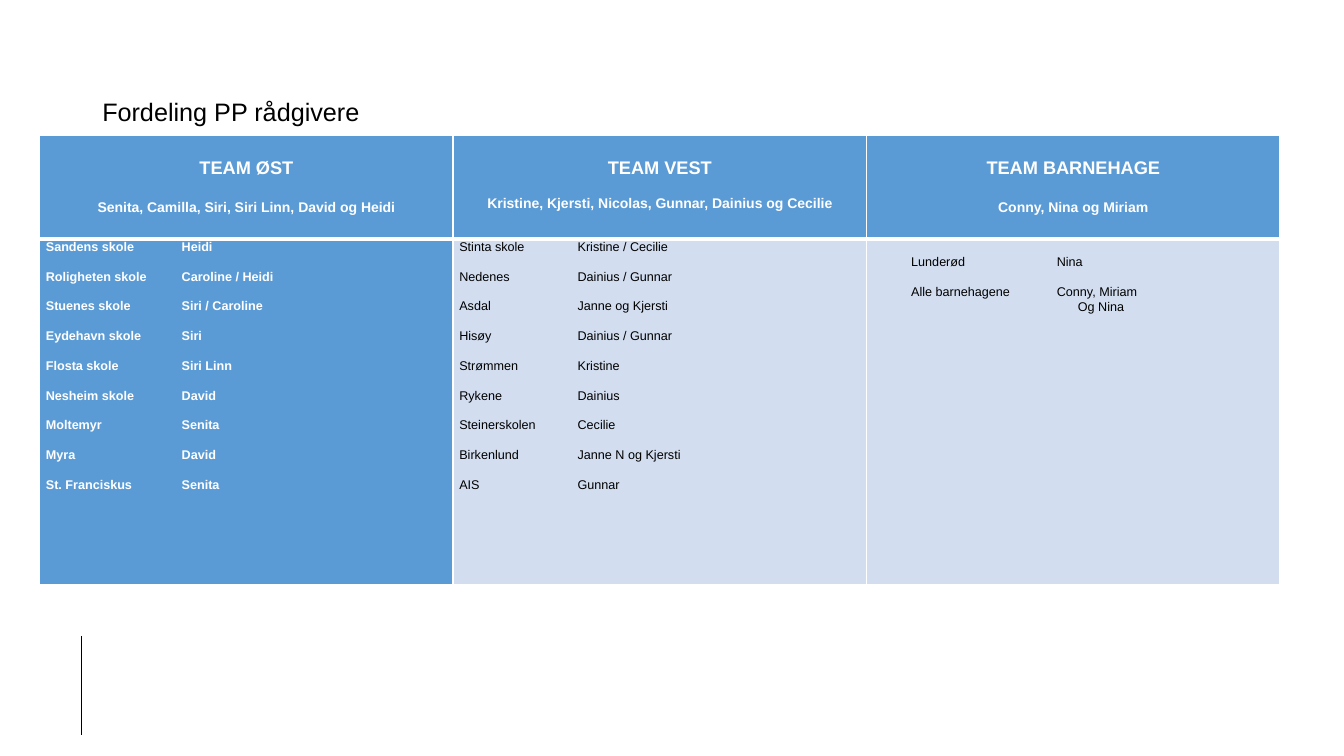
from lxml.etree import SubElement
from pptx import Presentation
from pptx.dml.color import RGBColor
from pptx.enum.text import MSO_ANCHOR, PP_ALIGN
from pptx.oxml.ns import qn
from pptx.util import Pt

BLACK = RGBColor(0x00, 0x00, 0x00)
WHITE = RGBColor(0xFF, 0xFF, 0xFF)
BLUE = RGBColor(0x5B, 0x9B, 0xD5)
PALE = RGBColor(0xD2, 0xDE, 0xEF)

HEADS = [
    ("TEAM ØST", "Senita, Camilla, Siri, Siri Linn, David og Heidi", 15),
    ("TEAM VEST", "Kristine, Kjersti, Nicolas, Gunnar, Dainius og Cecilie", 12),
    ("TEAM BARNEHAGE", "Conny, Nina og Miriam", 15),
]
EAST = [
    "Sandens skole\tHeidi",
    "Roligheten skole\tCaroline / Heidi",
    "Stuenes skole\tSiri / Caroline",
    "Eydehavn skole\tSiri",
    "Flosta skole\tSiri Linn",
    "Nesheim skole\tDavid",
    "Moltemyr\tSenita",
    "Myra\tDavid",
    "St. Franciskus\tSenita",
]
WEST = [
    "Stinta skole\tKristine / Cecilie",
    "Nedenes\tDainius / Gunnar",
    "Asdal\tJanne og Kjersti",
    "Hisøy\tDainius / Gunnar",
    "Strømmen\tKristine",
    "Rykene\tDainius",
    "Steinerskolen\tCecilie",
    "Birkenlund\tJanne N og Kjersti",
    "AIS\tGunnar",
]
KIDS = ["Lunderød\tNina", "Alle barnehagene\tConny, Miriam", "\t\tOg Nina"]


class Page:
    """Draws styled elements on one slide."""

    def __init__(self, slide, face="Arial", gap=10.45):
        self.slide = slide
        self.face = face
        self.gap = gap

    def label(self, para, text, size, color, bold=False, lead=1.07, gap=0, tabs=()):
        para.text = text
        para.line_spacing = lead
        para.space_before = Pt(gap)
        if tabs:
            stops = SubElement(para._p.get_or_add_pPr(), qn("a:tabLst"))
            for stop in tabs:
                SubElement(stops, qn("a:tab"), pos=str(Pt(stop)), algn="l")
        font = para.font
        font.name, font.size, font.bold = self.face, Pt(size), bold
        font.color.rgb = color

    def title(self, text, left, top, width, height):
        box = self.slide.shapes.add_textbox(Pt(left), Pt(top), Pt(width), Pt(height))
        frame = box.text_frame
        frame.word_wrap = True
        frame.vertical_anchor = MSO_ANCHOR.MIDDLE
        self.label(frame.paragraphs[0], text, 18, BLACK, lead=0.9)

    def line(self, left, top, right, end):
        rule = self.slide.shapes.add_connector(1, Pt(left), Pt(top), Pt(right), Pt(end))
        rule.line.color.rgb = BLACK
        rule.line.width = Pt(0.5)
        SubElement(rule._element.spPr, qn("a:effectLst"))

    def grid(self, left, top, width, rows, cols):
        frame = self.slide.shapes.add_table(
            len(rows), cols, Pt(left), Pt(top), Pt(width), Pt(sum(rows)))
        table = frame.table
        table.horz_banding = False
        for row, height in zip(table.rows, rows):
            row.height = Pt(height)
        for col in table.columns:
            col.width = Pt(width / cols)
        return table

    def cell(self, cell, fill, edges, inset=4.5, top=0):
        cell.margin_left, cell.margin_right = Pt(inset), Pt(4.5)
        cell.margin_top, cell.margin_bottom = Pt(top), Pt(0)
        props = cell._tc.get_or_add_tcPr()
        for side, width in zip("LRTB", edges):
            edge = SubElement(props, qn(f"a:ln{side}"), w=str(Pt(width)))
            paint = SubElement(edge, qn("a:solidFill"))
            SubElement(paint, qn("a:srgbClr"), val=str(WHITE))
        cell.fill.solid()
        cell.fill.fore_color.rgb = fill

    def head(self, cell, team, names, gap):
        self.cell(cell, BLUE, (1, 1, 1, 3), top=15)
        frame = cell.text_frame
        self.label(frame.paragraphs[0], team, 13, WHITE, True)
        self.label(frame.add_paragraph(), names, 10, WHITE, True, gap=gap)
        for para in frame.paragraphs:
            para.alignment = PP_ALIGN.CENTER

    def body(self, cell, items, fill, color, bold, tabs, inset=4.5, top=0):
        self.cell(cell, fill, (1, 1, 3, 1), inset, top)
        frame = cell.text_frame
        for i, item in enumerate(items):
            para = frame.add_paragraph() if i else frame.paragraphs[0]
            gap = 0 if i == 0 or item.startswith("\t") else self.gap
            self.label(para, item, 9, color, bold, gap=gap, tabs=tabs)


def main():
    deck = Presentation()
    deck.slide_width, deck.slide_height = Pt(960), Pt(540)
    page = Page(deck.slides.add_slide(deck.slide_layouts[6]))
    page.line(58.3, 454.3, 58.3, 525)
    page.title("Fordeling PP rådgivere", 66, 28.8, 828, 104.4)
    table = page.grid(28.3, 96.8, 886, (74, 247), len(HEADS))
    for col, (team, names, gap) in enumerate(HEADS):
        page.head(table.cell(0, col), team, names, gap)
    page.body(table.cell(1, 0), EAST, BLUE, WHITE, True, (97,))
    page.body(table.cell(1, 1), WEST, PALE, BLACK, False, (84.5,))
    page.body(table.cell(1, 2), KIDS, PALE, BLACK, False, (104, 119), 32, 10.75)
    deck.save("out.pptx")


if __name__ == "__main__":
    main()
